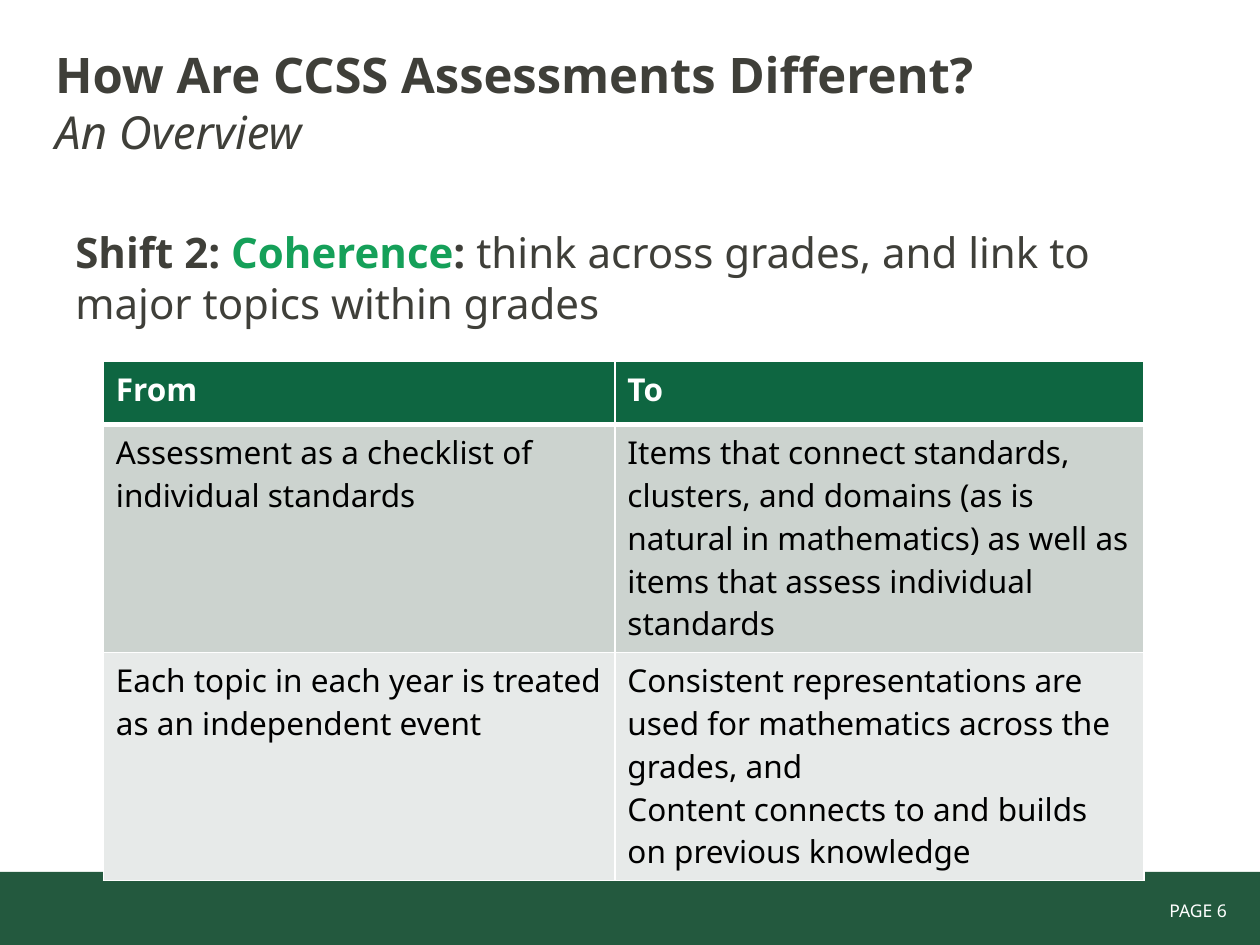
from dataclasses import dataclass
from typing import NamedTuple
from lxml.etree import SubElement
from pptx import Presentation
from pptx.dml.color import RGBColor
from pptx.enum.shapes import MSO_SHAPE
from pptx.enum.text import MSO_ANCHOR, PP_ALIGN
from pptx.oxml.ns import qn
from pptx.util import Inches, Pt

FONT = "Noto Sans"
COLS, ROWS = 100, 75
HUES = {
    "ink": "3F3F39", "white": "FFFFFF", "black": "000000", "leaf": "15A059",
    "foot": "23593E", "head": "0E6641", "dark": "CCD3CF", "light": "E7EAE9",
}


class Box(NamedTuple):
    col: float
    row: float
    wide: float
    high: float


@dataclass
class Piece:
    text: str
    size: float
    hue: str = "ink"
    bold: bool = False
    slant: bool = False


@dataclass
class Block:
    box: Box
    lines: list[list[Piece]]
    align: PP_ALIGN = PP_ALIGN.LEFT
    anchor: MSO_ANCHOR = MSO_ANCHOR.TOP


@dataclass
class Band:
    high: float
    fill: str
    hue: str
    bold: bool
    top: float
    base: float
    cells: list[list[str]]


deck = Presentation()
deck.slide_width, deck.slide_height = Inches(10), Inches(7.5)


def across(count: float) -> int:
    return round(deck.slide_width * count / COLS)


def down(count: float) -> int:
    return round(deck.slide_height * count / ROWS)


def place(box: Box) -> tuple[int, int, int, int]:
    return across(box.col), down(box.row), across(box.wide), down(box.high)


def tint(name: str) -> RGBColor:
    return RGBColor.from_string(HUES[name])


def write(frame, lines: list[list[Piece]], align: PP_ALIGN = PP_ALIGN.LEFT) -> None:
    frame.word_wrap = True
    for rank, line in enumerate(lines):
        para = frame.add_paragraph() if rank else frame.paragraphs[0]
        para.alignment = align
        for piece in line:
            run = para.add_run()
            run.text = piece.text
            font = run.font
            font.name, font.size = FONT, Pt(piece.size)
            font.bold, font.italic = piece.bold, piece.slant
            font.color.rgb = tint(piece.hue)


def add_block(slide, block: Block) -> None:
    frame = slide.shapes.add_textbox(*place(block.box)).text_frame
    frame.vertical_anchor = block.anchor
    write(frame, block.lines, block.align)


def add_bar(slide, box: Box, fill: str) -> None:
    bar = slide.shapes.add_shape(MSO_SHAPE.RECTANGLE, *place(box))
    bar.shadow.inherit = False
    bar.fill.solid()
    bar.fill.fore_color.rgb = tint(fill)
    bar.line.fill.background()


def edge(cell, top: float, base: float) -> None:
    props = cell._tc.get_or_add_tcPr()
    for side, width in (("L", 1), ("R", 1), ("T", top), ("B", base)):
        line = SubElement(props, qn(f"a:ln{side}"), w=str(Pt(width)))
        fill = SubElement(line, qn("a:solidFill"))
        SubElement(fill, qn("a:srgbClr"), val=HUES["white"])


def add_grid(slide, box: Box, widths: list[float], bands: list[Band]) -> None:
    grid = slide.shapes.add_table(len(bands), len(widths), *place(box)).table
    for col, wide in zip(grid.columns, widths):
        col.width = across(wide)
    for row, band in zip(grid.rows, bands):
        row.height = down(band.high)
        for cell, texts in zip(row.cells, band.cells):
            edge(cell, band.top, band.base)
            cell.fill.solid()
            cell.fill.fore_color.rgb = tint(band.fill)
            write(cell.text_frame, [[Piece(text, 18, band.hue, band.bold)] for text in texts])


BLOCKS = [
    Block(Box(82.8, 70.9, 15.9, 2.7), [[Piece("PAGE 6 ", 10, "white")]],
          align=PP_ALIGN.RIGHT),
    Block(Box(3.4, 1.8, 90, 12.5), [
        [Piece("How Are CCSS Assessments Different?", 28, bold=True)],
        [Piece("An Overview", 26, slant=True)],
    ], anchor=MSO_ANCHOR.MIDDLE),
    Block(Box(5, 17.5, 90, 49.5), [[
        Piece("Shift 2: ", 24, bold=True),
        Piece("Coherence", 24, "leaf", bold=True),
        Piece(": ", 24, bold=True),
        Piece("think across grades, and link to major topics within grades", 24),
    ]]),
]

BANDS = [
    Band(5, "head", "white", True, 1, 3, [["From"], ["To"]]),
    Band(18.1, "dark", "black", False, 3, 1, [
        ["Assessment as a checklist of individual standards"],
        ["Items that connect standards, clusters, and domains (as is natural in "
         "mathematics) as well as items that assess individual standards"],
    ]),
    Band(18.1, "light", "black", False, 1, 1, [
        ["Each topic in each year is treated as an independent event"],
        ["Consistent representations are used for mathematics across the grades, and",
         "Content connects to and builds on previous knowledge"],
    ]),
]


def main() -> None:
    slide = deck.slides.add_slide(deck.slide_layouts[6])
    add_bar(slide, Box(0, 69.2, 100, 5.8), "foot")
    for block in BLOCKS:
        add_block(slide, block)
    high = sum(band.high for band in BANDS)
    add_grid(slide, Box(8.2, 28.7, 82.6, high), [40.6, 42], BANDS)
    deck.save("out.pptx")


if __name__ == "__main__":
    main()
